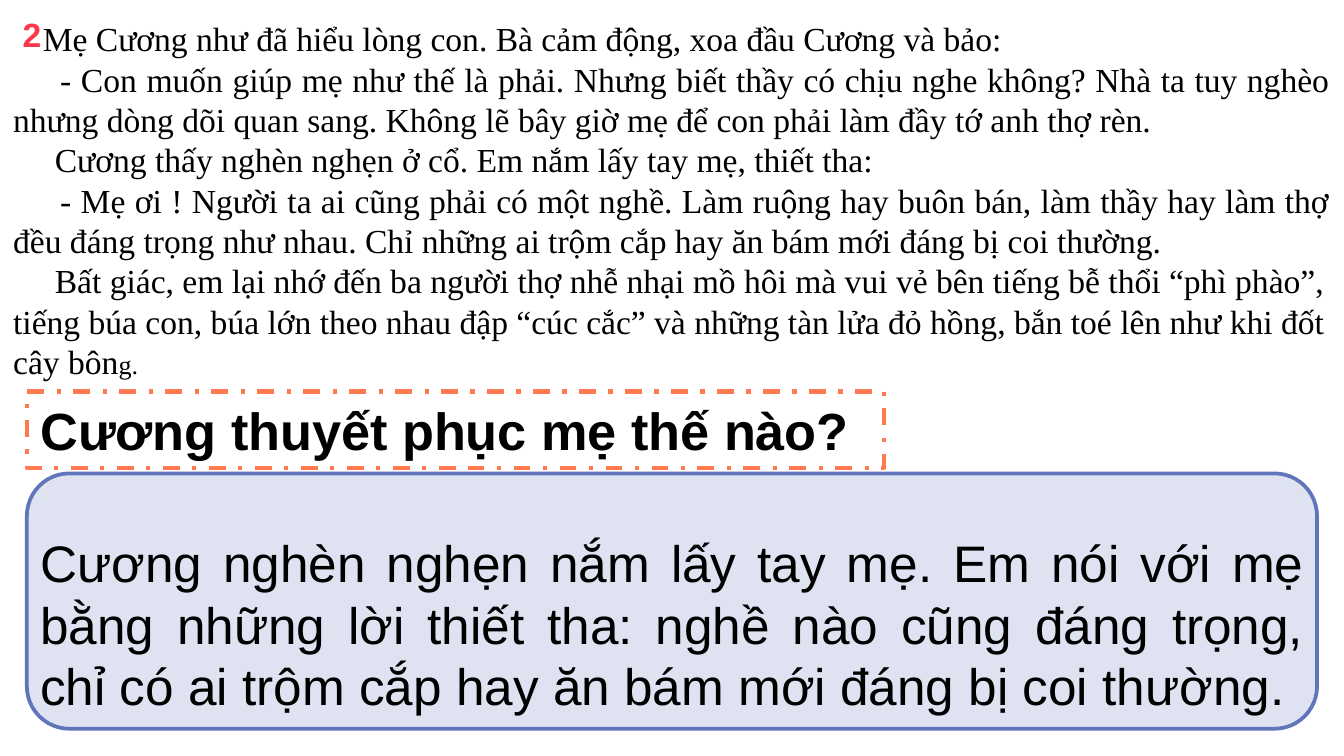
import dataclasses
import typing

import pptx
import pptx.dml.color
import pptx.enum.dml
import pptx.enum.shapes
import pptx.enum.text
import pptx.util

CELL = 0.1  # inches per grid column and row
COLS, ROWS = 100, 56.25
LEFT = pptx.enum.text.PP_ALIGN.LEFT
FULL = pptx.enum.text.PP_ALIGN.JUSTIFY
GROW = pptx.enum.text.MSO_AUTO_SIZE.SHAPE_TO_FIT_TEXT
FIXED = pptx.enum.text.MSO_AUTO_SIZE.NONE


@dataclasses.dataclass
class Area:
    col: float
    row: float
    cols: float
    rows: float


@dataclasses.dataclass
class Para:
    text: str
    align: int = FULL
    indent: float = 0
    tail: str = ""  # closing characters in small type


def grid(count: float) -> int:
    return pptx.util.Inches(count * CELL)


def color(code: str) -> pptx.dml.color.RGBColor:
    return pptx.dml.color.RGBColor.from_string(code)


def span(area: Area) -> list[int]:
    return [grid(n) for n in (area.col, area.row, area.cols, area.rows)]


def add_run(para: typing.Any, text: str, style: dict, ink: str) -> None:
    run = para.add_run()
    run.text = text
    for key, value in style.items():
        setattr(run.font, key, value)
    run.font.color.rgb = color(ink)


def write(shape: typing.Any, paras: list[Para], style: dict,
          ink: str = "000000", fit: int = GROW) -> None:
    frame = shape.text_frame
    form = {
        "word_wrap": True,
        "auto_size": fit,
        "vertical_anchor": pptx.enum.text.MSO_ANCHOR.TOP,
    }
    for key, value in form.items():
        setattr(frame, key, value)
    for i, item in enumerate(paras):
        para = frame.add_paragraph() if i else frame.paragraphs[0]
        para.alignment = item.align
        para._p.get_or_add_pPr().set("indent", str(pptx.util.Inches(item.indent)))
        add_run(para, item.text, style, ink)
        if item.tail:
            add_run(para, item.tail, style | {"size": pptx.util.Pt(14)}, ink)


def outline(shape: typing.Any, code: str, width: float) -> None:
    shape.line.color.rgb = color(code)
    shape.line.width = pptx.util.Pt(width)


def font(name: str, size: float, bold: bool = False) -> dict:
    return {"name": name, "size": pptx.util.Pt(size), "bold": bold}


STORY = [
    Para("Mẹ Cương như đã hiểu lòng con. Bà cảm động, xoa đầu Cương và bảo:", indent=0.22),
    Para("- Con muốn giúp mẹ như thế là phải. Nhưng biết thầy có chịu nghe không? "
         "Nhà ta tuy nghèo nhưng dòng dõi quan sang. Không lẽ bây giờ mẹ để con "
         "phải làm đầy tớ anh thợ rèn.", indent=0.35),
    Para("Cương thấy nghèn nghẹn ở cổ. Em nắm lấy tay mẹ, thiết tha:", indent=0.31),
    Para("- Mẹ ơi ! Người ta ai cũng phải có một nghề. Làm ruộng hay buôn bán, "
         "làm thầy hay làm thợ đều đáng trọng như nhau. Chỉ những ai trộm cắp hay "
         "ăn bám mới đáng bị coi thường.", indent=0.35),
    Para("Bất giác, em lại nhớ đến ba người thợ nhễ nhại mồ hôi mà vui vẻ bên tiếng "
         "bễ thổi “phì phào”, tiếng búa con, búa lớn theo nhau đập “cúc cắc” và "
         "những tàn lửa đỏ hồng, bắn toé lên như khi đốt cây bôn", LEFT, 0.31, "g."),
]
ANSWER = ("Cương nghèn nghẹn nắm lấy tay mẹ. Em nói với mẹ bằng những lời thiết tha: "
          "nghề nào cũng đáng trọng, chỉ có ai trộm cắp hay ăn bám mới đáng bị coi thường.")


def main() -> None:
    deck = pptx.Presentation()
    deck.slide_width, deck.slide_height = grid(COLS), grid(ROWS)
    slide = deck.slides.add_slide(deck.slide_layouts[5])
    shapes = slide.shapes

    # Story and its part number
    story = shapes.add_textbox(*span(Area(0, 0.87, COLS, 28.3)))
    write(story, STORY, font("Times New Roman", 18))
    mark = shapes.add_textbox(*span(Area(0.7, 0.55, 3.8, 4)))
    write(mark, [Para("2", LEFT)], font("Arial", 18, True), "FD364C")

    # Question
    title = shapes.title
    place = span(Area(2, 29.13, 63.8, 5.7))
    for key, value in zip(("left", "top", "width", "height"), place):
        setattr(title, key, value)
    write(title, [Para("Cương thuyết phục mẹ thế nào?")], font("Arial", 28, True), fit=FIXED)
    outline(title, "FF7A50", 2.25)
    title.line.dash_style = pptx.enum.dml.MSO_LINE.DASH_DOT

    # Answer on its panel
    group = shapes.add_group_shape().shapes
    kind = pptx.enum.shapes.MSO_SHAPE.ROUNDED_RECTANGLE
    panel = group.add_shape(kind, *span(Area(2, 35.23, 96, 19)))
    panel.shadow.inherit = False
    panel.fill.solid()
    panel.fill.fore_color.rgb = color("DFE3F1")
    outline(panel, "6175BB", 2)
    reply = group.add_textbox(*span(Area(2, 39.05, 96, 14.9)))
    write(reply, [Para(ANSWER)], font("Arial", 27.5))

    deck.save("out.pptx")


if __name__ == "__main__":
    main()
